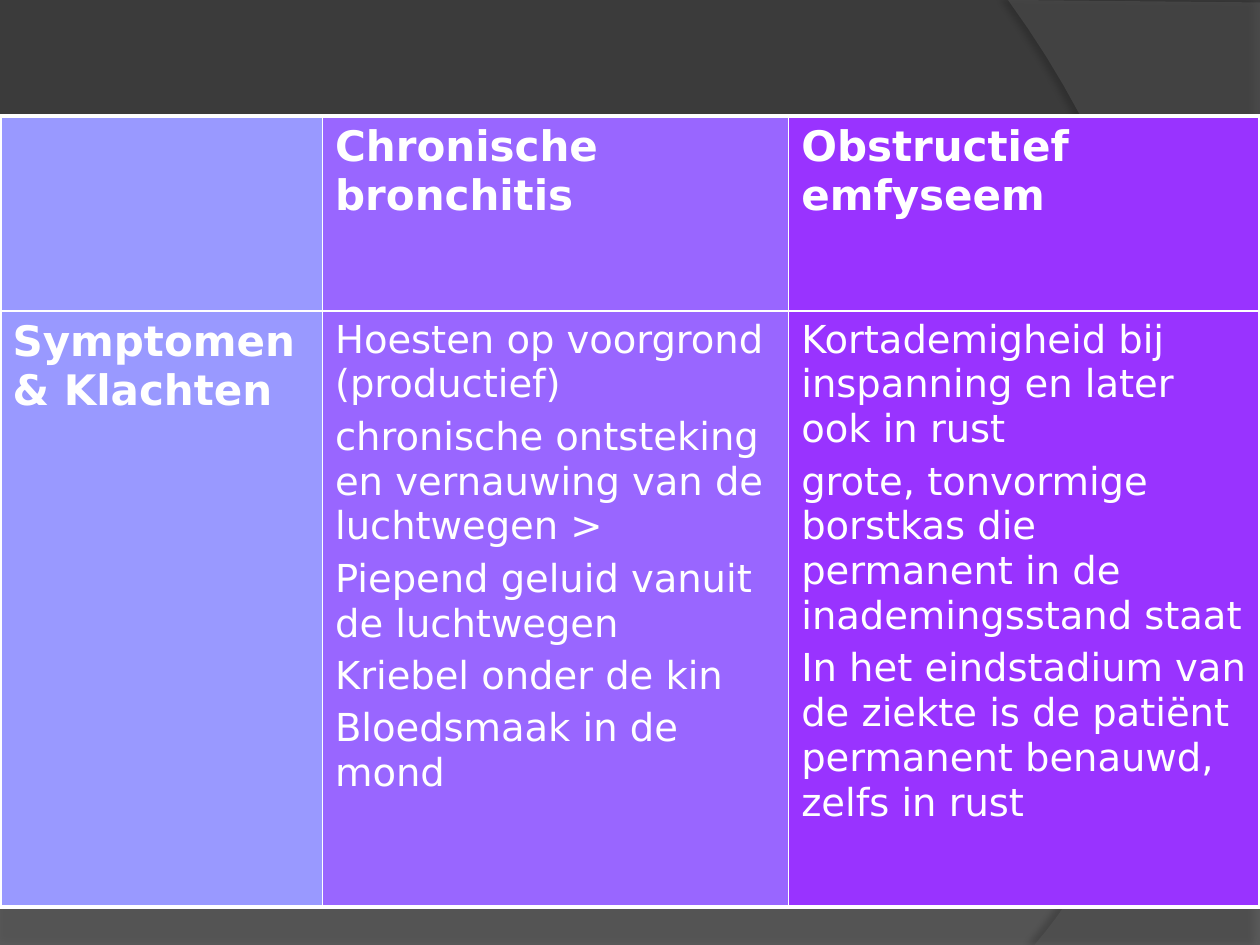
import pptx
import pptx.dml.color
import pptx.oxml
import pptx.oxml.ns
import pptx.util
from lxml import etree

Inches = pptx.util.Inches
Pt = pptx.util.Pt
RGBColor = pptx.dml.color.RGBColor
qn = pptx.oxml.ns.qn

BACKDROP = RGBColor(0x3B, 0x3B, 0x3B)
LOWER_WAVE = RGBColor(0x7F, 0x7F, 0x7F)
RIGHT_WAVE = RGBColor(0x5E, 0x5E, 0x5E)
WHITE = RGBColor(0xFF, 0xFF, 0xFF)
COLUMN_FILLS = [
    RGBColor(0x99, 0x99, 0xFF),
    RGBColor(0x99, 0x66, 0xFF),
    RGBColor(0x99, 0x33, 0xFF),
]
FONT = "DejaVu Sans"
COLUMN_WIDTHS = [2.56, 3.7, 3.74]
ROW_HEIGHTS = [1.55, 4.73]
OUTER_LINE, INNER_LINE = 2.25, 1

CELLS = [
    [[], ["Chronische bronchitis"], ["Obstructief emfyseem"]],
    [
        ["Symptomen & Klachten"],
        [
            "Hoesten op voorgrond (productief)",
            "chronische ontsteking en vernauwing van de luchtwegen >",
            "Piepend geluid vanuit de luchtwegen",
            "Kriebel onder de kin",
            "Bloedsmaak in de mond",
        ],
        [
            "Kortademigheid bij inspanning en later ook in rust",
            "grote, tonvormige borstkas die permanent in de inademingsstand staat",
            "In het eindstadium van de ziekte is de patiënt permanent benauwd, "
            "zelfs in rust",
        ],
    ],
]


def add_child(parent, tag, **attributes):
    child = etree.SubElement(parent, qn(tag))
    for name, value in attributes.items():
        child.set(name, str(value))
    return child


def curve(start, first, second, end, steps=40):
    """Return points along a cubic Bezier curve, after its start."""
    points = []
    for step in range(1, steps + 1):
        t = step / steps
        weights = [(1 - t) ** 3, 3 * t * (1 - t) ** 2, 3 * t * t * (1 - t), t ** 3]
        corners = [start, first, second, end]
        points.append(tuple(
            sum(w * corner[axis] for w, corner in zip(weights, corners))
            for axis in (0, 1)
        ))
    return points


def add_wave(page, left, top, points, color, opacity, shadow_opacity, distance, angle):
    """Draw a translucent, shadowed outline with points relative to its box."""
    placed = [(Inches(left + x), Inches(top + y)) for x, y in points]
    builder = page.shapes.build_freeform(*placed[0], scale=1.0)
    builder.add_line_segments(placed[1:], close=True)
    wave = builder.convert_to_shape()
    wave.fill.solid()
    wave.fill.fore_color.rgb = color
    wave.line.fill.background()
    wave.shadow.inherit = False
    properties = wave._element.spPr
    add_child(properties.find(qn("a:solidFill"))[0], "a:alpha", val=opacity * 1000)
    shadow = add_child(
        properties.find(qn("a:effectLst")), "a:outerShdw",
        blurRad=Pt(4), dist=Pt(distance), dir=angle * 60000,
        algn="ctr", rotWithShape=0,
    )
    shade = add_child(shadow, "a:srgbClr", val="000000")
    add_child(shade, "a:alpha", val=shadow_opacity * 1000)


def add_backdrop(page):
    page.background.fill.solid()
    page.background.fill.fore_color.rgb = BACKDROP
    lower = [(0, 1.85), (0, 2.31), (10, 2.31), (10, 0)]
    lower += curve((10, 0), (5.59, 2.09), (3.91, 1.99), (0, 1.85))
    add_wave(page, 0, 5.2, lower, LOWER_WAVE, 45, 35, 3.5, 270)
    right = [(2, 0.02), (2, 7.5), (0.21, 7.5)]
    right += curve((0.21, 7.5), (1.35, 6.19), (2.18, 3), (0, 0))
    add_wave(page, 8, 0, right, RIGHT_WAVE, 40, 45, 4, 180)


def set_borders(cell, widths):
    """Set white borders, given widths for left, right, top and bottom."""
    properties = cell._tc.get_or_add_tcPr()
    for index, (side, width) in enumerate(zip("LRTB", widths)):
        border = add_child(properties, f"a:ln{side}", w=Pt(width))
        fill = add_child(border, "a:solidFill")
        add_child(fill, "a:srgbClr", val=WHITE)
        properties.insert(index, border)


def write_cell(cell, lines, size, bold):
    cell.text_frame.text = "\n".join(lines)
    for para in cell.text_frame.paragraphs:
        spacing = add_child(para._p.get_or_add_pPr(), "a:spcBef")
        add_child(spacing, "a:spcPct", val=20000)
        para.font.size = Pt(size)
        for span in para.runs:
            span.font.name = FONT
            span.font.size = Pt(size)
            span.font.bold = bold
            span.font.color.rgb = WHITE


def add_comparison(page, left, top, width, height):
    last_row, last_column = len(ROW_HEIGHTS) - 1, len(COLUMN_WIDTHS) - 1
    table = page.shapes.add_table(
        last_row + 1, last_column + 1,
        Inches(left), Inches(top), Inches(width), Inches(height),
    ).table
    for column, column_width in zip(table.columns, COLUMN_WIDTHS):
        column.width = Inches(column_width)
    for row, row_height in zip(table.rows, ROW_HEIGHTS):
        row.height = Inches(row_height)
    for r, row_lines in enumerate(CELLS):
        for c, lines in enumerate(row_lines):
            cell = table.cell(r, c)
            cell.fill.solid()
            cell.fill.fore_color.rgb = COLUMN_FILLS[c]
            heading = r == 0 or c == 0
            write_cell(cell, lines, 24 if heading else 22, heading)
            edges = [c == 0, c == last_column, r == 0, r == last_row]
            set_borders(cell, [OUTER_LINE if edge else INNER_LINE for edge in edges])


def main():
    deck = pptx.Presentation()
    deck.slide_width, deck.slide_height = Inches(10), Inches(7.5)
    page = deck.slides.add_slide(deck.slide_layouts[6])
    add_backdrop(page)
    add_comparison(page, 0, 0.92, sum(COLUMN_WIDTHS), sum(ROW_HEIGHTS))
    deck.save("out.pptx")


if __name__ == "__main__":
    main()
